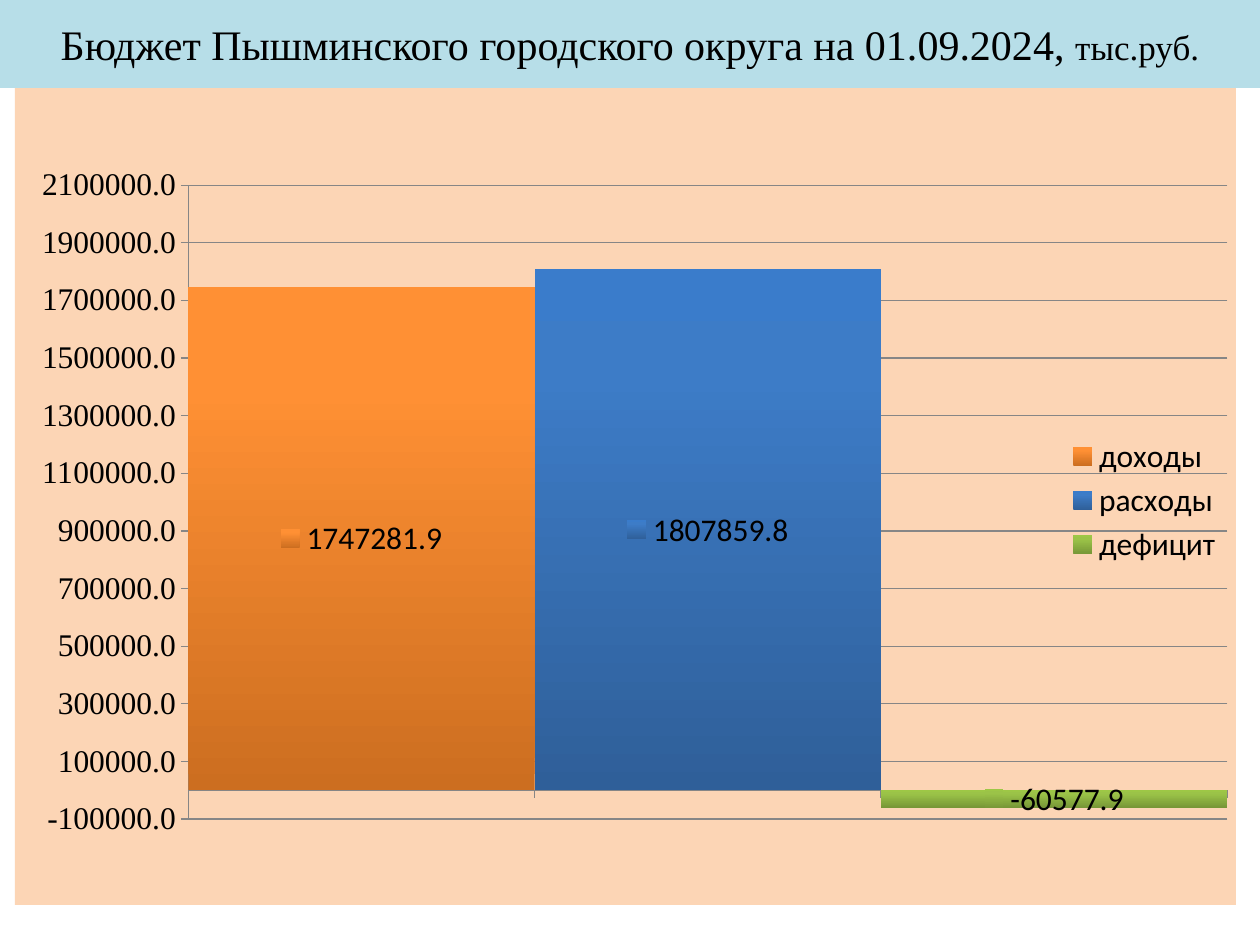
from copy import deepcopy
from dataclasses import dataclass

from pptx import Presentation
from pptx.chart.data import CategoryChartData
from pptx.dml.color import RGBColor
from pptx.enum.chart import (XL_CHART_TYPE, XL_LABEL_POSITION, XL_LEGEND_POSITION,
                             XL_TICK_LABEL_POSITION, XL_TICK_MARK)
from pptx.enum.shapes import MSO_SHAPE
from pptx.enum.text import MSO_ANCHOR, PP_ALIGN
from pptx.oxml import parse_xml
from pptx.oxml.ns import nsdecls, qn
from pptx.util import Pt

PX = 914400 / 126


@dataclass(frozen=True)
class Theme:
    """Colours, fonts and type sizes of the slide."""
    text: str = "000000"
    title_fill: str = "B7DEE8"
    chart_fill: str = "FCD5B5"
    axis: str = "868686"
    serif: str = "Times New Roman"
    sans: str = "Calibri"
    title: int = 24
    unit: int = 20
    label: int = 18


THEME = Theme()
STOPS = (0, 0.8, 1)
BUDGET = (
    ("доходы", 1747281.9, ("CC6E20", "FF9034", "FF9136")),
    ("расходы", 1807859.8, ("2F5F99", "3D7CC7", "3A7CCB")),
    ("дефицит", -60577.9, ("779737", "9BC348", "9DC746")),
)


def emu(*lengths):
    """Turn px lengths into EMU."""
    return [round(n * PX) for n in lengths]


def rgb(code):
    """Return the colour for a hex code."""
    return RGBColor.from_string(code)


def set_font(font, name, size):
    """Give a font its face, size and the text colour."""
    font.name, font.size = name, Pt(size)
    font.color.rgb = rgb(THEME.text)


def manual_layout(x, y, w, h, inner=False):
    """Return a chart layout element in fractions of the chart."""
    target = '<c:layoutTarget val="inner"/>' if inner else ""
    return parse_xml(
        f'<c:layout {nsdecls("c")}><c:manualLayout>{target}'
        '<c:xMode val="edge"/><c:yMode val="edge"/>'
        f'<c:x val="{x}"/><c:y val="{y}"/><c:w val="{w}"/><c:h val="{h}"/>'
        '</c:manualLayout></c:layout>')


def add_title(slide, box):
    """Draw the title band with its smaller unit."""
    sp = slide.shapes.add_shape(MSO_SHAPE.RECTANGLE, *emu(*box))
    sp.shadow.inherit = False
    sp.fill.solid()
    sp.fill.fore_color.rgb = rgb(THEME.title_fill)
    sp.line.fill.background()
    tf = sp.text_frame
    tf.word_wrap = True
    tf.vertical_anchor = MSO_ANCHOR.MIDDLE
    p = tf.paragraphs[0]
    p.alignment = PP_ALIGN.CENTER
    for text, size in (("Бюджет Пышминского городского округа на 01.09.2024, ", THEME.title),
                       ("тыс.руб.", THEME.unit)):
        r = p.add_run()
        r.text = text
        set_font(r.font, THEME.serif, size)


def style_axes(chart):
    """Set the scale, ticks and lines of both axes."""
    value, cat = chart.value_axis, chart.category_axis
    value.minimum_scale, value.maximum_scale = -100000, 2100000
    value.major_unit = 200000
    value.has_major_gridlines = True
    value.tick_labels.number_format = "0.0"
    value.tick_labels.number_format_is_linked = False
    set_font(value.tick_labels.font, THEME.serif, THEME.label)
    cat.tick_label_position = XL_TICK_LABEL_POSITION.NONE
    for axis in (value, cat):
        axis.major_tick_mark = XL_TICK_MARK.OUTSIDE
        axis.minor_tick_mark = XL_TICK_MARK.NONE
    for part in (value, cat, value.major_gridlines):
        part.format.line.color.rgb = rgb(THEME.axis)
        part.format.line.width = Pt(0.75)


def style_columns(plot):
    """Fill the columns with gradients and label their values."""
    plot.gap_width = 0
    plot.vary_by_categories = True
    series = plot.series[0]
    series.invert_if_negative = False
    for i, (_, _, colors) in enumerate(BUDGET):
        fmt = series.points[i].format
        fmt.line.fill.background()
        fmt.fill.gradient()
        fmt.fill.gradient_angle = 90
        stops = series._element.findall(".//" + qn("a:gsLst"))[-1]
        stops.append(deepcopy(stops[-1]))
        for stop, position, color in zip(fmt.fill.gradient_stops, STOPS, colors):
            stop.position = position
            stop.color.rgb = rgb(color)
    plot.has_data_labels = True
    labels = plot.data_labels
    labels.show_value = labels.show_legend_key = True
    labels.position = XL_LABEL_POSITION.CENTER
    labels.number_format = "0.0"
    labels.number_format_is_linked = False
    set_font(labels.font, THEME.sans, THEME.label)


def add_budget_chart(slide, box):
    """Draw the budget column chart with its legend."""
    data = CategoryChartData(number_format="0.0")
    data.categories = [name for name, _, _ in BUDGET]
    data.add_series("Series 1", [amount for _, amount, _ in BUDGET])
    chart = slide.shapes.add_chart(XL_CHART_TYPE.COLUMN_CLUSTERED, *emu(*box), data).chart
    chart.has_title = False
    set_font(chart.font, THEME.sans, THEME.label)
    style_axes(chart)
    style_columns(chart.plots[0])

    chart.has_legend = True
    legend = chart.legend
    legend.position = XL_LEGEND_POSITION.RIGHT
    legend.include_in_layout = False
    set_font(legend.font, THEME.sans, THEME.label)
    for old in legend._element.findall(qn("c:layout")):
        legend._element.remove(old)
    legend._element.insert(1, manual_layout(0.86, 0.42, 0.13, 0.17))

    root = chart._chartSpace.find(qn("c:chart"))
    area = root.find(qn("c:plotArea"))
    for old in area.findall(qn("c:layout")):
        area.remove(old)
    area.insert(0, manual_layout(0.142, 0.119, 0.851, 0.776, inner=True))
    root.addnext(parse_xml(
        f'<c:spPr {nsdecls("c", "a")}><a:solidFill><a:srgbClr val="{THEME.chart_fill}"/>'
        '</a:solidFill><a:ln><a:noFill/></a:ln></c:spPr>'))


def main():
    """Build the budget slide and save it."""
    prs = Presentation()
    prs.slide_width, prs.slide_height = emu(1260, 945)
    slide = prs.slides.add_slide(prs.slide_layouts[6])
    add_title(slide, (0, 0, 1260, 88))
    add_budget_chart(slide, (15, 88, 1221, 817))
    prs.save("out.pptx")


if __name__ == "__main__":
    main()
